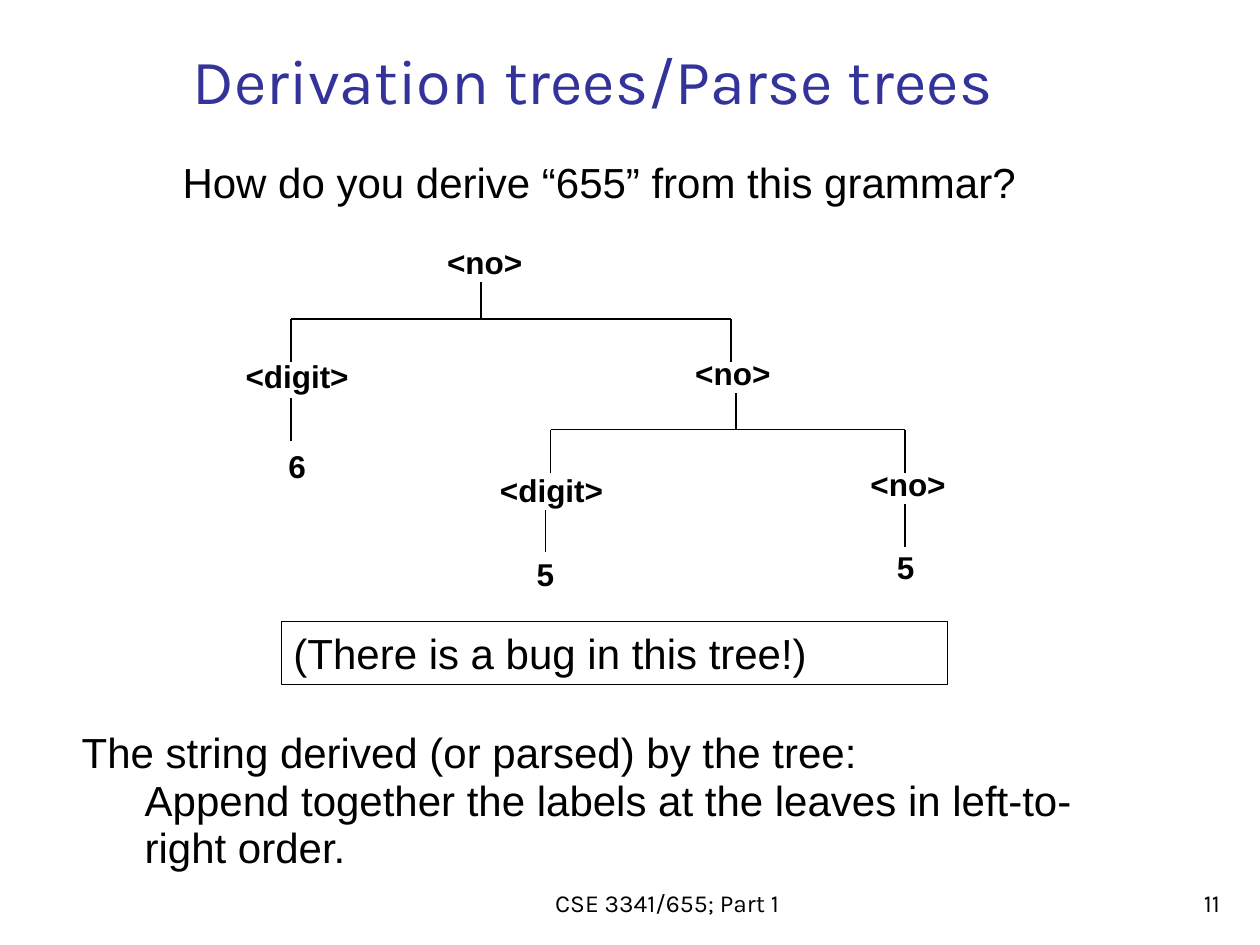
"""Build the slide on derivation trees and parse trees."""
from dataclasses import dataclass

from lxml.etree import SubElement
from pptx import Presentation
from pptx.dml.color import RGBColor
from pptx.enum.shapes import MSO_CONNECTOR as Connector, MSO_SHAPE as Preset
from pptx.enum.text import MSO_ANCHOR as Anchor, PP_ALIGN as Align
from pptx.oxml.ns import qn
from pptx.slide import Slide
from pptx.util import Pt

COLOURS = {"ink": "000000", "title": "333399"}
LABEL_WIDTHS = {"<no>": 66.2, "<digit>": 78.5}
LEAF_WIDTH = 27.4


@dataclass
class Block:
    lines: list[str]
    left: float
    top: float
    width: float
    height: float
    size: float = 24
    font: str = "Arial"
    colour: str = "ink"
    bold: bool = False
    align: Align = Align.LEFT
    anchor: Anchor = Anchor.TOP
    framed: bool = False


@dataclass
class Label:
    text: str
    left: float
    top: float


@dataclass
class Branch:
    trunk: float
    top: float
    bar: float
    left: float
    right: float
    bottom: float


@dataclass
class Stem:
    x: float
    top: float
    bottom: float


BLOCKS = [
    Block(["CSE 3341/655; Part 1"], 178.6, 491, 405.4, 36.7, 14, "Karla",
          align=Align.CENTER, anchor=Anchor.BOTTOM),
    Block(["11"], 554.4, 491.8, 149.8, 36, 14, "Karla",
          align=Align.RIGHT, anchor=Anchor.BOTTOM),
    Block(["Derivation trees/Parse trees"], 103, 10.1, 568.8, 60.5, 36, "Karla",
          "title", anchor=Anchor.BOTTOM),
    Block(["How do you derive “655” from this grammar?"], 97.2, 85.7, 504.7, 36),
    Block(["(There is a bug in this tree!)"], 160.6, 355, 380.9, 36, framed=True),
    Block(["The string derived (or parsed) by the tree:",
           "Append together the labels at the leaves in left-to-",
           "right order."], 39.6, 411.8, 586.8, 95),
]
LABELS = [
    Label("<no>", 248.4, 135.4),
    Label("<no>", 390.2, 198.7),
    Label("<digit>", 133.2, 200.2),
    Label("<digit>", 278.6, 265.7),
    Label("<no>", 490.3, 262.1),
    Label("6", 157.7, 252),
    Label("5", 299.5, 313.9),
    Label("5", 505.4, 309.6),
]
BRANCHES = [
    Branch(275, 161.3, 182.2, 166.3, 417.6, 206.6),
    Branch(420.5, 224.6, 245.5, 314.6, 517, 270),
]
STEMS = [
    Stem(166.3, 227.5, 252),
    Stem(311.8, 291.6, 315.4),
    Stem(517, 288, 312.5),
]


def colour_of(name: str) -> RGBColor:
    """Return the named colour."""
    return RGBColor.from_string(COLOURS[name])


def draw_block(page: Slide, block: Block) -> None:
    """Draw a text block, indenting every line after the first."""
    place = [Pt(v) for v in (block.left, block.top, block.width, block.height)]
    if block.framed:
        box = page.shapes.add_shape(Preset.RECTANGLE, *place)
        box.shadow.inherit = False
        box.fill.background()
        box.line.color.rgb = colour_of("ink")
        box.line.width = Pt(0.25)
    else:
        box = page.shapes.add_textbox(*place)
    frame = box.text_frame
    frame.word_wrap = True
    frame.vertical_anchor = block.anchor
    frame.text = "\n".join(block.lines)
    for index, para in enumerate(frame.paragraphs):
        para.alignment = block.align
        para.font.size = Pt(block.size)
        para.font.name = block.font
        para.font.bold = block.bold
        para.font.color.rgb = colour_of(block.colour)
        if index:
            para.line_spacing = Pt(15)
            para.space_before = Pt(12)
            para._p.get_or_add_pPr().set("marL", str(Pt(36)))


def draw_label(page: Slide, label: Label) -> None:
    """Draw the text of one tree node."""
    width = LABEL_WIDTHS.get(label.text, LEAF_WIDTH)
    draw_block(page, Block([label.text], label.left, label.top, width, 28.8, 18, bold=True))


def draw_line(page: Slide, x1: float, y1: float, x2: float, y2: float) -> None:
    """Draw a thin straight line."""
    line = page.shapes.add_connector(Connector.STRAIGHT, Pt(x1), Pt(y1), Pt(x2), Pt(y2))
    line.line.color.rgb = colour_of("ink")
    line.line.width = Pt(1)
    SubElement(line._element.spPr, qn("a:effectLst"))


def draw_branch(page: Slide, branch: Branch) -> None:
    """Draw a trunk, its crossbar and a drop at each end."""
    draw_line(page, branch.trunk, branch.top, branch.trunk, branch.bar)
    draw_line(page, branch.left, branch.bar, branch.right, branch.bar)
    for x in (branch.left, branch.right):
        draw_line(page, x, branch.bar, x, branch.bottom)


def main() -> None:
    """Build and save the deck."""
    deck = Presentation()
    deck.slide_width, deck.slide_height = Pt(720), Pt(540)
    page = deck.slides.add_slide(deck.slide_layouts[6])
    for block in BLOCKS:
        draw_block(page, block)
    for branch in BRANCHES:
        draw_branch(page, branch)
    for stem in STEMS:
        draw_line(page, stem.x, stem.top, stem.x, stem.bottom)
    for label in LABELS:
        draw_label(page, label)
    deck.save("out.pptx")


if __name__ == "__main__":
    main()
